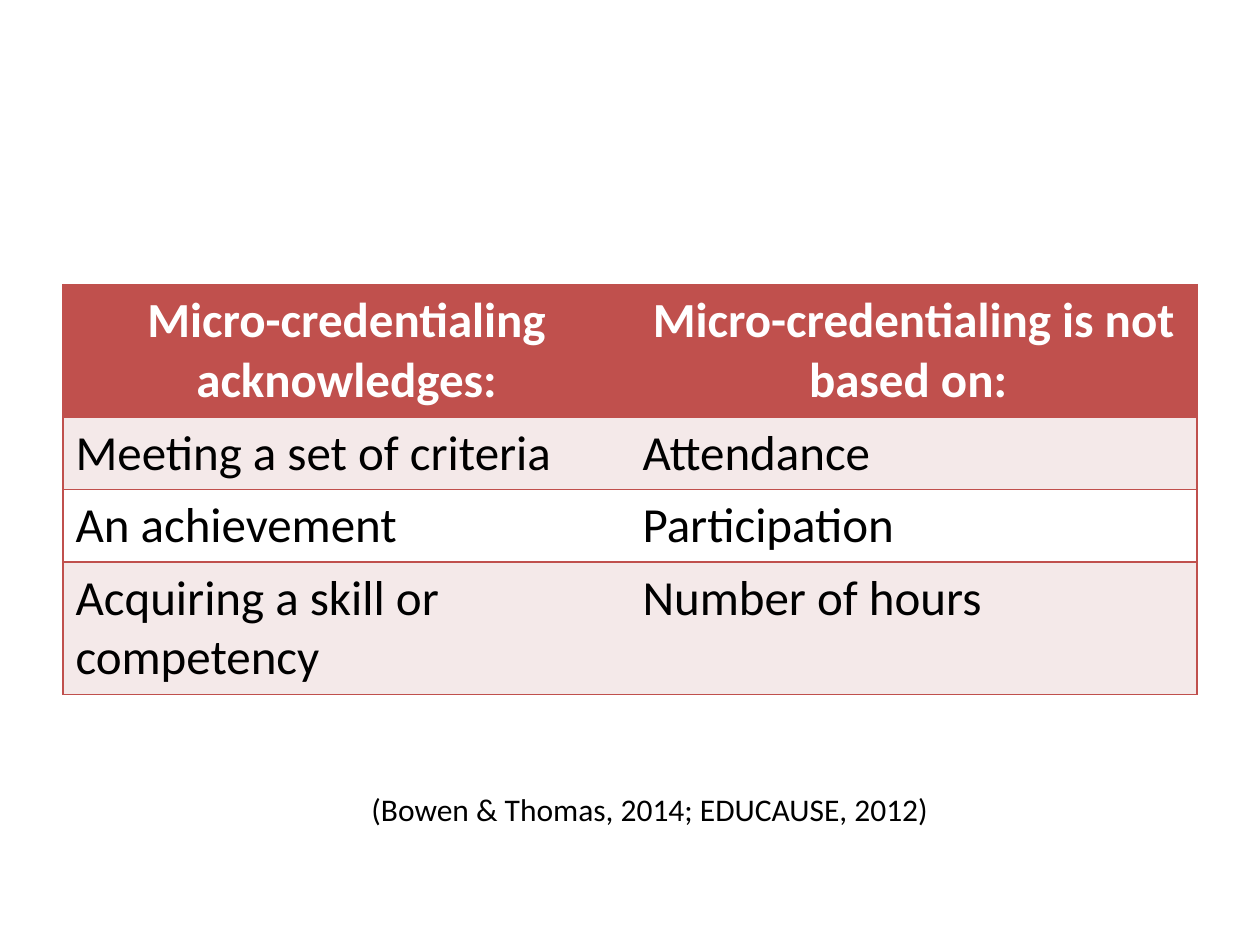
from lxml import etree
from pptx import Presentation
from pptx.dml.color import RGBColor
from pptx.enum import text
from pptx.oxml import ns
from pptx.util import Inches, Pt

# Content
HEADINGS = ("Micro-credentialing acknowledges:", "Micro-credentialing is not based on: ")
COMPARISONS = [
    ("Meeting a set of criteria", "Attendance"),
    ("An achievement", "Participation"),
    ("Acquiring a skill or competency", "Number of hours"),
]
CITATION = "(Bowen & Thomas, 2014; EDUCAUSE, 2012)"

# Style
FONT = "Calibri"
RED, PINK, WHITE, BLACK = "C0504D", "F4E9E9", "FFFFFF", "000000"
ONE_LINE, TWO_LINES = 0.56, 1.04
ROW_HEIGHTS = (TWO_LINES, ONE_LINE, ONE_LINE, TWO_LINES)
COLUMN_WIDTH = 4.5


def color(value):
    return RGBColor.from_string(value)


def add_text(paragraph, words, size, ink, bold=False):
    run = paragraph.add_run()
    run.text = words
    run.font.name = FONT
    run.font.size = Pt(size)
    run.font.bold = bold
    run.font.color.rgb = color(ink)


def set_borders(cell, visible_sides):
    properties = cell._tc.get_or_add_tcPr()
    for side in "LRTB":
        line = etree.SubElement(properties, ns.qn("a:ln" + side), w=str(Pt(1)))
        if side in visible_sides:
            fill = etree.SubElement(line, ns.qn("a:solidFill"))
            etree.SubElement(fill, ns.qn("a:srgbClr"), val=RED)
        else:
            etree.SubElement(line, ns.qn("a:noFill"))


presentation = Presentation()
presentation.slide_width, presentation.slide_height = Inches(10), Inches(7.5)
slide = presentation.slides.add_slide(presentation.slide_layouts[6])

# Comparison table
rows = [HEADINGS] + COMPARISONS
table = slide.shapes.add_table(
    len(rows), len(HEADINGS), Inches(0.5), Inches(2.26),
    Inches(COLUMN_WIDTH * len(HEADINGS)), Inches(sum(ROW_HEIGHTS))).table
table.horz_banding = False
for column in table.columns:
    column.width = Inches(COLUMN_WIDTH)

for row_index, (words_in_row, height) in enumerate(zip(rows, ROW_HEIGHTS)):
    table.rows[row_index].height = Inches(height)
    is_heading = row_index == 0
    background = RED if is_heading else PINK if row_index % 2 else WHITE
    for column_index, words in enumerate(words_in_row):
        cell = table.cell(row_index, column_index)
        set_borders(cell, "TB" + "LR"[column_index])  # outer side only
        cell.fill.solid()
        cell.fill.fore_color.rgb = color(background)
        paragraph = cell.text_frame.paragraphs[0]
        paragraph.alignment = text.PP_ALIGN.CENTER if is_heading else text.PP_ALIGN.LEFT
        add_text(paragraph, words, 28, WHITE if is_heading else BLACK, is_heading)

# Citation
citation = slide.shapes.add_textbox(Inches(2.85), Inches(6.22), Inches(4.63), Inches(0.4))
citation.text_frame.word_wrap = False
citation.text_frame.auto_size = text.MSO_AUTO_SIZE.SHAPE_TO_FIT_TEXT
add_text(citation.text_frame.paragraphs[0], CITATION, 18, BLACK)

presentation.save("out.pptx")
